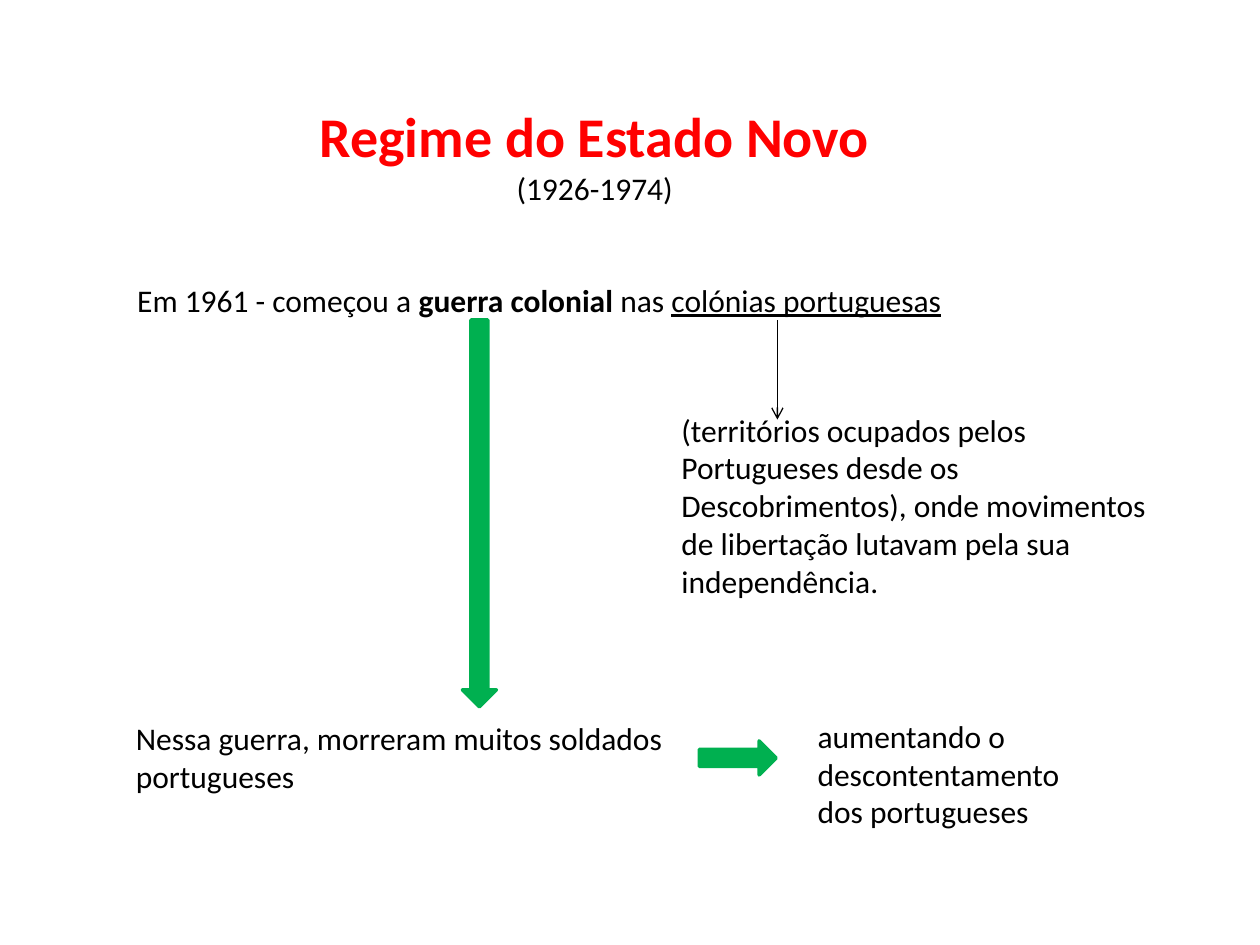
from dataclasses import dataclass

from lxml import etree
from pptx import Presentation
from pptx.dml.color import RGBColor as RGB
from pptx.enum.shapes import MSO_CONNECTOR as Link, MSO_SHAPE as Shape
from pptx.enum.text import MSO_AUTO_SIZE as Fit, PP_ALIGN as Align
from pptx.oxml.ns import qn
from pptx.util import Inches, Pt


@dataclass(frozen=True)
class Theme:
    font: str = "Calibri"
    head: int = 32
    body: int = 18
    ink: RGB = RGB(0, 0, 0)
    red: RGB = RGB(0xFF, 0, 0)
    green: RGB = RGB(0, 0xB0, 0x50)
    thin: float = 0.75
    thick: float = 2


THEME = Theme()


def add_run(para, text, size=THEME.body, color=THEME.ink, bold=False, line=False):
    run = para.add_run()
    run.text = text
    font = run.font
    font.name, font.size = THEME.font, Pt(size)
    font.color.rgb = color
    font.bold, font.underline = bold, line


def add_box(slide, box):
    """Add a wrapping text box and return its frame."""
    frame = slide.shapes.add_textbox(*map(Inches, box)).text_frame
    frame.word_wrap = True
    frame.auto_size = Fit.SHAPE_TO_FIT_TEXT
    return frame


def add_note(slide, box, text):
    add_run(add_box(slide, box).paragraphs[0], text)


def add_title(slide, box):
    frame = add_box(slide, box)
    name, years = frame.paragraphs[0], frame.add_paragraph()
    name.alignment = years.alignment = Align.CENTER
    add_run(name, "Regime do Estado Novo", THEME.head, THEME.red, bold=True)
    add_run(years, "(1926-1974)")


def add_event(slide, box):
    para = add_box(slide, box).paragraphs[0]
    add_run(para, "Em 1961 - começou a ")
    add_run(para, "guerra colonial ", bold=True)
    add_run(para, "nas ")
    add_run(para, "colónias portuguesas", line=True)


def add_block(slide, box, turn=0):
    """Add a green block arrow that points down before it is turned."""
    arrow = slide.shapes.add_shape(Shape.DOWN_ARROW, *map(Inches, box))
    arrow.shadow.inherit = False
    arrow.rotation = turn
    arrow.fill.solid()
    arrow.fill.fore_color.rgb = THEME.green
    arrow.line.color.rgb = THEME.green
    arrow.line.width = Pt(THEME.thick)


def add_pointer(slide, x, top, end):
    line = slide.shapes.add_connector(
        Link.STRAIGHT, Inches(x), Inches(top), Inches(x), Inches(end))
    line.line.color.rgb = THEME.ink
    line.line.width = Pt(THEME.thin)
    etree.SubElement(line.line._get_or_add_ln(), qn("a:tailEnd"), type="arrow")
    etree.SubElement(line._element.spPr, qn("a:effectLst"))


def main():
    deck = Presentation()
    deck.slide_width, deck.slide_height = Inches(10), Inches(7.5)
    slide = deck.slides.add_slide(deck.slide_layouts[6])

    add_note(slide, (0.98, 5.66, 4.65, 0.71),
             "Nessa guerra, morreram muitos soldados portugueses")
    add_event(slide, (0.99, 2.18, 7.95, 0.4))
    add_note(slide, (5.31, 3.21, 4.06, 1.62),
             "(territórios ocupados pelos Portugueses desde os Descobrimentos), "
             "onde movimentos de libertação lutavam pela sua independência.")
    add_pointer(slide, 6.17, 2.54, 3.33)
    add_block(slide, (3.67, 2.54, 0.27, 3.07))
    add_block(slide, (5.72, 5.71, 0.27, 0.61), turn=270)
    add_note(slide, (6.39, 5.64, 2.51, 1.01),
             "aumentando o descontentamento dos portugueses")
    add_title(slide, (1.61, 0.76, 6.22, 0.94))

    deck.save("out.pptx")


if __name__ == "__main__":
    main()
